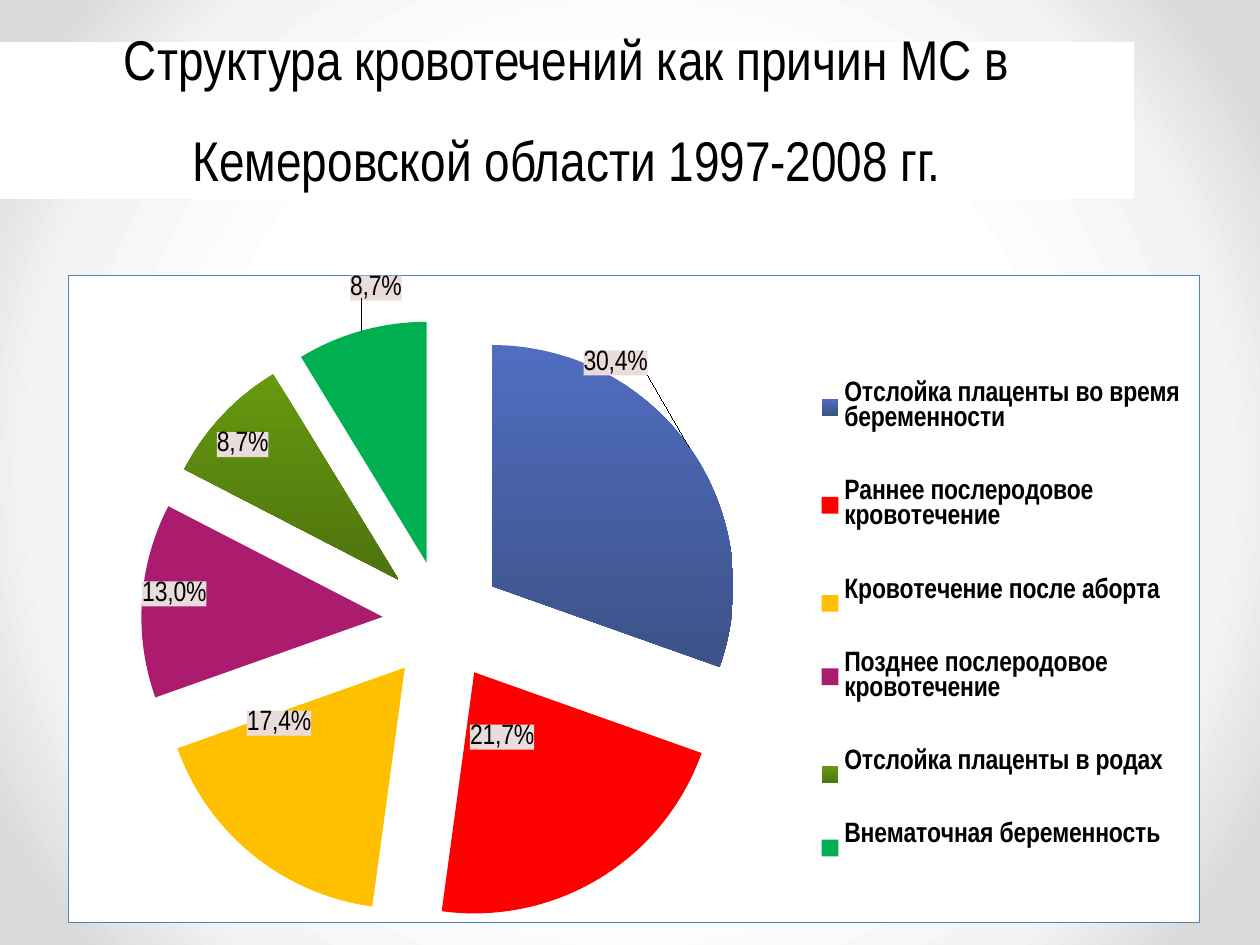
from dataclasses import dataclass

from pptx import Presentation
from pptx.chart.data import CategoryChartData
from pptx.dml.color import RGBColor
from pptx.enum.chart import XL_CHART_TYPE, XL_LABEL_POSITION, XL_LEGEND_POSITION
from pptx.enum.shapes import MSO_SHAPE
from pptx.enum.text import MSO_ANCHOR, PP_ALIGN
from pptx.oxml import parse_xml
from pptx.oxml.ns import nsdecls
from pptx.util import Emu, Pt

PIE = XL_CHART_TYPE.PIE
LABEL_CENTER = XL_LABEL_POSITION.CENTER
LEGEND_RIGHT = XL_LEGEND_POSITION.RIGHT
RECTANGLE = MSO_SHAPE.RECTANGLE
BOTTOM = MSO_ANCHOR.BOTTOM
CENTER = PP_ALIGN.CENTER

PX = 914400 // 126
SLIDE_SIZE = (1260, 945)
TITLE_BOX = (0, 42, 1134, 157)
CHART_BOX = (68, 275, 1132, 648)


@dataclass(frozen=True)
class Theme:
    font: str = "Arial Narrow"
    chart_font: str = "Vollkorn"
    text: str = "000000"
    panel: str = "FFFFFF"
    border: str = "4F81BD"
    label_fill: str = "EADCDB"
    backdrop: tuple = ((50, "FFFFFF"), (76, "F4F4F4"), (92, "DADADA"))
    title_size: int = 32
    title_leading: int = 58
    label_size: int = 16
    chart_size: int = 10


THEME = Theme()

TITLE = "Структура кровотечений как причин МС в Кемеровской области 1997-2008 гг."

# cause, share, label, slice colours from top to bottom, label shift from the slice middle in px
CAUSES = (
    ("Отслойка плаценты во время беременности ", 0.304, "30,4%", ("506DC0", "3D5288"), (25, -154)),
    ("Раннее послеродовое кровотечение ", 0.217, "21,7%", ("FF0000",), (-35, -38)),
    ("Кровотечение после аборта", 0.174, "17,4%", ("FFC000",), (-50, -38)),
    ("Позднее послеродовое кровотечение ", 0.13, "13,0%", ("AC1C6E",), (-88, -15)),
    ("Отслойка плаценты в родах ", 0.087, "8,7%", ("66990F", "4E730F"), (-68, -53)),
    ("Внематочная беременность", 0.087, "8,7%", ("00B050",), (-18, -161)),
)


def to_emu(box):
    return [Emu(length * PX) for length in box]


def style_font(font, **values):
    font.color.rgb = RGBColor.from_string(THEME.text)
    for name, value in values.items():
        setattr(font, name, value)


def paint(fill, colors):
    """Fill with one colour, or with two that run from top to bottom."""
    if len(colors) == 1:
        fill.solid()
        fill.fore_color.rgb = RGBColor.from_string(colors[0])
        return
    fill.gradient()
    fill.gradient_angle = 270
    for stop, color in zip(fill.gradient_stops, colors):
        stop.color.rgb = RGBColor.from_string(color)


def solid_xml(color):
    return f'<a:solidFill><a:srgbClr val="{color}"/></a:solidFill>'


def chart_box_xml(color, line=""):
    return parse_xml(f'<c:spPr {nsdecls("c", "a")}>{solid_xml(color)}{line}</c:spPr>')


def layout_xml(modes, **fractions):
    parts = "".join(f'<c:{name} val="{value}"/>' for name, value in fractions.items())
    return parse_xml(
        f'<c:layout {nsdecls("c")}><c:manualLayout>{modes}{parts}</c:manualLayout></c:layout>'
    )


def add_backdrop(slide):
    slide.background.fill.gradient()
    gradient = slide.element.xpath(".//p:bgPr/a:gradFill")[0]
    stops = "".join(
        f'<a:gs pos="{position * 1000}"><a:srgbClr val="{color}"/></a:gs>'
        for position, color in THEME.backdrop
    )
    radial = parse_xml(
        f'<a:gradFill {nsdecls("a")} rotWithShape="1"><a:gsLst>{stops}</a:gsLst>'
        '<a:path path="circle"><a:fillToRect l="50000" t="50000" r="50000" b="50000"/></a:path>'
        "</a:gradFill>"
    )
    gradient.getparent().replace(gradient, radial)


def add_title(slide, box):
    banner = slide.shapes.add_shape(RECTANGLE, *to_emu(box))
    banner.shadow.inherit = False
    banner.line.fill.background()
    paint(banner.fill, (THEME.panel,))
    frame = banner.text_frame
    frame.word_wrap = True
    frame.vertical_anchor = BOTTOM
    heading = frame.paragraphs[0]
    heading.alignment = CENTER
    heading.line_spacing = Pt(THEME.title_leading)
    run = heading.add_run()
    run.text = TITLE
    style_font(run.font, name=THEME.font, size=Pt(THEME.title_size))


def add_label(point, text, shift, chart_size):
    label = point.data_label
    frame = label.text_frame
    run = frame.paragraphs[0].add_run()
    run.text = text
    style_font(run.font, name=THEME.font, size=Pt(THEME.label_size), bold=False)
    label.position = LABEL_CENTER
    x, y = (round(offset / length, 3) for offset, length in zip(shift, chart_size))
    rich_text = frame._element.getparent()
    rich_text.addprevious(layout_xml("", x=x, y=y))
    rich_text.addnext(chart_box_xml(THEME.label_fill))


def add_legend(chart):
    chart.has_legend = True
    legend = chart.legend
    legend.position = LEGEND_RIGHT
    legend.include_in_layout = False
    style_font(legend.font, name=THEME.font, size=Pt(THEME.label_size), bold=True)
    legend_pos = chart._chartSpace.xpath(".//c:legendPos")[0]
    modes = '<c:xMode val="edge"/><c:yMode val="edge"/>'
    legend_pos.addnext(layout_xml(modes, x=0.682, y=0.09, w=0.318, h=0.87))


def add_causes_chart(slide, box):
    data = CategoryChartData(number_format="0.00%")
    data.categories = [cause[0] for cause in CAUSES]
    data.add_series("Series 1", [cause[1] for cause in CAUSES])
    chart = slide.shapes.add_chart(PIE, *to_emu(box), data).chart
    chart.has_title = False
    style_font(chart.font, name=THEME.chart_font, size=Pt(THEME.chart_size))
    add_legend(chart)

    plot = chart.plots[0]
    plot.vary_by_categories = True
    series = plot.series[0]
    labels = series.data_labels
    label_format = {"show_value": True, "number_format": "0.00%", "number_format_is_linked": False}
    for name, value in label_format.items():
        setattr(labels, name, value)
    style_font(labels.font, name=THEME.font, size=Pt(THEME.label_size), bold=True)
    for index, (_, _, text, colors, shift) in enumerate(CAUSES):
        point = series.points[index]
        paint(point.format.fill, colors)
        add_label(point, text, shift, box[2:])

    space = chart._chartSpace
    first_slice = space.xpath(".//c:ser/c:dPt")[0]
    first_slice.addprevious(parse_xml(f'<c:explosion {nsdecls("c")} val="25"/>'))

    plot_area = space.xpath(".//c:plotArea")[0]
    for layout in plot_area.xpath("./c:layout"):
        plot_area.remove(layout)
    modes = '<c:layoutTarget val="inner"/><c:xMode val="edge"/><c:yMode val="edge"/>'
    plot_area.insert(0, layout_xml(modes, x=0, y=0.068, w=0.662, h=0.932))

    border = f'<a:ln w="{Pt(0.75)}">{solid_xml(THEME.border)}</a:ln>'
    space.xpath("./c:chart")[0].addnext(chart_box_xml(THEME.panel, border))


def main():
    deck = Presentation()
    deck.slide_width, deck.slide_height = to_emu(SLIDE_SIZE)
    slide = deck.slides.add_slide(deck.slide_layouts[6])
    add_backdrop(slide)
    add_title(slide, TITLE_BOX)
    add_causes_chart(slide, CHART_BOX)
    deck.save("out.pptx")


if __name__ == "__main__":
    main()
